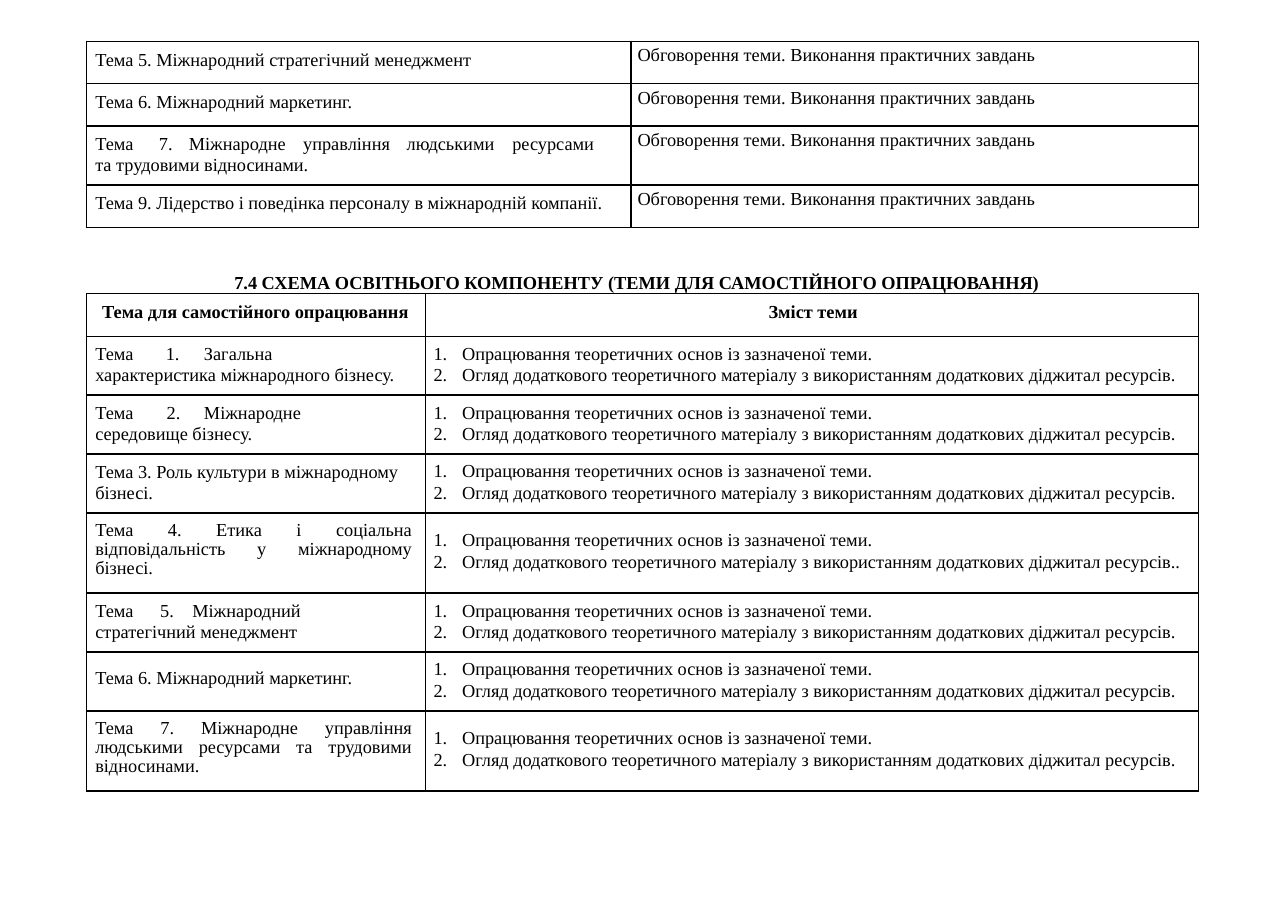
import pptx
import pptx.dml.color
import pptx.enum.text
import pptx.oxml.ns
import pptx.util
import lxml.etree

Cm = pptx.util.Cm
Pt = pptx.util.Pt
ALIGN = pptx.enum.text.PP_ALIGN
COLORS = {"ink": "000000", "paper": "FFFFFF"}


def add_child(parent, tag, **attributes):
    child = lxml.etree.SubElement(parent, pptx.oxml.ns.qn(tag))
    for name, value in attributes.items():
        child.set(name, str(value))
    return child


class SyllabusPage:
    """Holds the text style and the slide being filled."""

    font_name = "Times New Roman"
    font_size = Pt(12)

    def __init__(self, presentation):
        self.slide = presentation.slides.add_slide(presentation.slide_layouts[5])

    def color(self, name):
        return pptx.dml.color.RGBColor.from_string(COLORS[name])

    def paragraph(self, paragraph, text, align=ALIGN.LEFT, spacing=None, tabs=(),
                  hanging=0.0, bold=False):
        paragraph.text = text
        properties = paragraph._p.get_or_add_pPr()
        if hanging:
            properties.set("marL", str(Cm(hanging)))
            properties.set("indent", str(Cm(-hanging)))
            add_child(properties, "a:buFont", typeface=self.font_name)
            add_child(properties, "a:buAutoNum", type="arabicPeriod")
        if tabs:
            tab_list = add_child(properties, "a:tabLst")
            for stop in tabs:
                add_child(tab_list, "a:tab", pos=Cm(stop), algn="l")
        paragraph.alignment = align
        paragraph.space_before = Pt(0)
        if spacing:
            paragraph.line_spacing = spacing
        for run in paragraph.runs:
            run.font.name = self.font_name
            run.font.size = self.font_size
            run.font.bold = bold
            run.font.color.rgb = self.color("ink")

    def margins(self, holder, top, left, right=0.0):
        holder.margin_top, holder.margin_bottom = Cm(top), 0
        holder.margin_left, holder.margin_right = Cm(left), Cm(right)

    def heading(self, text, left, top, width, height):
        title = self.slide.shapes.title
        title.left, title.top = Cm(left), Cm(top)
        title.width, title.height = Cm(width), Cm(height)
        frame = title.text_frame
        frame.word_wrap = True
        frame.auto_size = pptx.enum.text.MSO_AUTO_SIZE.NONE
        frame.vertical_anchor = pptx.enum.text.MSO_ANCHOR.TOP
        self.margins(frame, 0.03, 0.03)
        self.paragraph(frame.paragraphs[0], text, bold=True)

    def grid(self, left, top, widths, heights):
        frame = self.slide.shapes.add_table(
            len(heights), len(widths), Cm(left), Cm(top), Cm(sum(widths)), Cm(sum(heights)))
        table = frame.table
        table.first_row = table.horz_banding = False
        for column, width in zip(table.columns, widths):
            column.width = Cm(width)
        for row, height in zip(table.rows, heights):
            row.height = Cm(height)
        for cell in table.iter_cells():
            self.border(cell)
            cell.fill.solid()
            cell.fill.fore_color.rgb = self.color("paper")
        return table

    def border(self, cell):
        properties = cell._tc.get_or_add_tcPr()
        for side in ("a:lnL", "a:lnR", "a:lnT", "a:lnB"):
            line = add_child(properties, side, w=Pt(1))
            add_child(add_child(line, "a:solidFill"), "a:srgbClr", val=COLORS["ink"])

    def cell(self, cell, texts, top, left=0.2, right=0.0, **style):
        self.margins(cell, top, left, right)
        frame = cell.text_frame
        for number, text in enumerate(texts):
            paragraph = frame.add_paragraph() if number else frame.paragraphs[0]
            self.paragraph(paragraph, text, **style)


def main():
    presentation = pptx.Presentation()
    presentation.slide_width = Cm(29.74)
    presentation.slide_height = Cm(21.03)
    page = SyllabusPage(presentation)
    exact = Pt(13.7)

    # Section heading
    page.heading("7.4 СХЕМА ОСВІТНЬОГО КОМПОНЕНТУ (ТЕМИ ДЛЯ САМОСТІЙНОГО ОПРАЦЮВАННЯ)",
                 5.38, 6.22, 21, 0.58)

    # Seminar topics: text and cell style
    seminars = [
        ("Тема 5. Міжнародний стратегічний менеджмент", {"top": 0.2}),
        ("Тема 6. Міжнародний маркетинг.", {"top": 0.2}),
        ("Тема\t7.\tМіжнародне\tуправління\tлюдськими\tресурсами\tта трудовими відносинами.",
         {"top": 0.18, "right": 0.38, "spacing": exact,
          "tabs": (1.47, 2.16, 4.8, 7.19, 9.63, 11.86)}),
        ("Тема 9. Лідерство і поведінка персоналу в міжнародній компанії.", {"top": 0.2}),
    ]
    seminar_table = page.grid(2, 0.95, (12.57, 13.11), (0.98, 0.98, 1.36, 0.98))
    for row, (topic, style) in enumerate(seminars):
        page.cell(seminar_table.cell(row, 0), [topic], **style)
        page.cell(seminar_table.cell(row, 1), ["Обговорення теми. Виконання практичних завдань"],
                  top=0.1, left=0.15)

    # Self-study topics: text, row height, top margin of the tasks, cell style
    tabbed = {"top": 0.18, "right": 0.66, "spacing": exact}
    justified = {"top": 0.18, "right": 0.3, "spacing": 0.95, "align": ALIGN.JUSTIFY}
    self_study = [
        ("Тема\t1.\tЗагальна\tхарактеристика міжнародного бізнесу.", 1.36, 0.15,
         {**tabbed, "tabs": (1.63, 2.51, 4.65)}),
        ("Тема\t2.\tМіжнародне\tсередовище бізнесу.", 1.36, 0.15,
         {**tabbed, "tabs": (1.65, 2.51, 5.33)}),
        ("Тема 3. Роль культури в міжнародному бізнесі.", 1.36, 0.15,
         {"top": 0.18, "right": 0.3, "spacing": exact}),
        ("Тема 4. Етика і соціальна відповідальність у міжнародному бізнесі.", 1.85, 0.38,
         justified),
        ("Тема\t5.\tМіжнародний\tстратегічний менеджмент", 1.36, 0.15,
         {**tabbed, "tabs": (1.5, 2.24, 5.16)}),
        ("Тема 6. Міжнародний маркетинг.", 1.36, 0.15, {"top": 0.38}),
        ("Тема 7. Міжнародне управління людськими ресурсами та трудовими відносинами.",
         1.85, 0.38, justified),
    ]
    heights = [0.98] + [height for _, height, _, _ in self_study]
    study_table = page.grid(2, 6.78, (7.82, 17.86), heights)
    page.cell(study_table.cell(0, 0), ["Тема для самостійного опрацювання"],
              top=0.2, left=0.36, bold=True)
    page.cell(study_table.cell(0, 1), ["Зміст теми"],
              top=0.2, left=0.05, align=ALIGN.CENTER, bold=True)
    for row, (topic, _, tasks_top, style) in enumerate(self_study, start=1):
        ending = ".." if "Тема 4" in topic else "."
        tasks = [
            "Опрацювання теоретичних основ із зазначеної теми.",
            "Огляд додаткового теоретичного матеріалу з використанням додаткових "
            "діджитал ресурсів" + ending,
        ]
        page.cell(study_table.cell(row, 0), [topic], **style)
        page.cell(study_table.cell(row, 1), tasks, top=tasks_top, left=0.19,
                  hanging=0.66, spacing=Pt(14.1))

    presentation.save("out.pptx")


if __name__ == "__main__":
    main()
